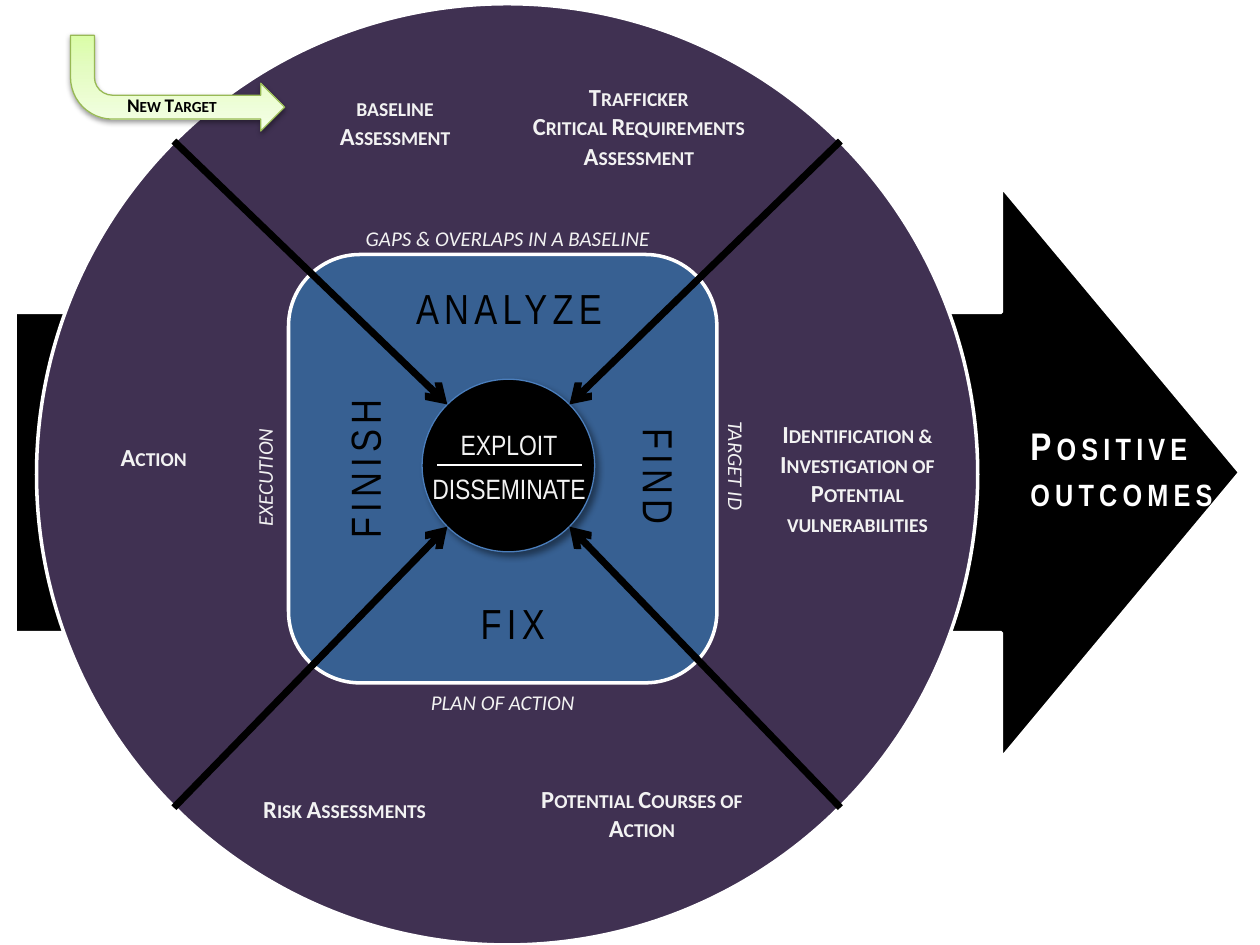
from copy import deepcopy
from dataclasses import dataclass

from lxml import etree
from pptx import Presentation
from pptx.dml.color import RGBColor
from pptx.enum.shapes import MSO_CONNECTOR, MSO_SHAPE
from pptx.enum.text import MSO_AUTO_SIZE, PP_ALIGN
from pptx.oxml.ns import qn
from pptx.util import Pt

PX = 9144  # EMU in one px, at 100 px to the inch

BLACK = RGBColor(0x00, 0x00, 0x00)
WHITE = RGBColor(0xFF, 0xFF, 0xFF)
PALE = RGBColor(0xF2, 0xF2, 0xF2)
PURPLE = RGBColor(0x40, 0x31, 0x52)
BLUE = RGBColor(0x37, 0x60, 0x92)
RIM_BLUE = RGBColor(0x4B, 0x7E, 0xBC)
RIM_GREEN = RGBColor(0x98, 0xB9, 0x55)
GREEN_STOPS = (
    (0, RGBColor(0xDA, 0xFD, 0xA7)),
    (0.35, RGBColor(0xE4, 0xFC, 0xC2)),
    (1, RGBColor(0xF5, 0xFF, 0xE7)),
)

RIGHT_ARROW = MSO_SHAPE.RIGHT_ARROW
BENT_ARROW = MSO_SHAPE.BENT_ARROW
OVAL = MSO_SHAPE.OVAL
ROUNDED = MSO_SHAPE.ROUNDED_RECTANGLE
STRAIGHT = MSO_CONNECTOR.STRAIGHT
CENTER, LEFT = PP_ALIGN.CENTER, PP_ALIGN.LEFT
GROW, FIXED = MSO_AUTO_SIZE.SHAPE_TO_FIT_TEXT, MSO_AUTO_SIZE.NONE

# Font properties, colour, and extra run attributes of each text style
STEP = ({"name": "Calibri", "size": Pt(14), "bold": True}, PALE, {"cap": "small"})
ENTRY = ({"name": "Calibri", "size": Pt(11), "bold": True}, BLACK, {"cap": "small"})
OUTPUT = ({"name": "Calibri", "size": Pt(12), "italic": True}, PALE, {})
PHASE = ({"name": "Arial Narrow", "size": Pt(24)}, BLACK, {"spc": "300"})
CORE = ({"name": "Arial Narrow", "size": Pt(16)}, PALE, {})
RESULT = ({"name": "Arial Narrow", "size": Pt(22), "bold": True}, WHITE,
          {"cap": "small", "spc": "300"})


@dataclass
class Figure:
    kind: int
    frame: tuple
    fill: RGBColor | None
    line: RGBColor
    weight: float
    adjustments: tuple = ()


@dataclass
class Label:
    text: str
    frame: tuple
    style: tuple
    align: int = CENTER
    rotation: int = 0
    fit: int = GROW
    wrap: bool = True
    space_after: int = 0
    hanging: int = 0


@dataclass
class Shadow:
    alpha: int
    blur: float
    distance: float
    angle: int


def emu(lengths: tuple) -> list:
    return [length * PX for length in lengths]


def draw_figure(page, figure: Figure):
    shape = page.shapes.add_shape(figure.kind, *emu(figure.frame))
    shape.shadow.inherit = False
    for index, value in enumerate(figure.adjustments):
        shape.adjustments[index] = value
    if figure.fill is not None:
        shape.fill.solid()
        shape.fill.fore_color.rgb = figure.fill
    shape.line.color.rgb = figure.line
    shape.line.width = Pt(figure.weight)
    return shape


def cast_shadow(shape, shadow: Shadow) -> None:
    effects = shape._element.spPr.find(qn("a:effectLst"))
    outer = etree.SubElement(
        effects, qn("a:outerShdw"), blurRad=str(Pt(shadow.blur)),
        dist=str(Pt(shadow.distance)), dir=str(shadow.angle * 60000), rotWithShape="0")
    color = etree.SubElement(outer, qn("a:srgbClr"), val=str(BLACK))
    etree.SubElement(color, qn("a:alpha"), val=str(shadow.alpha * 1000))


def fill_gradient(shape, stops: tuple) -> None:
    shape.fill.gradient()
    shape.fill.gradient_angle = 90
    stop_list = shape._element.spPr.find(".//" + qn("a:gsLst"))
    stop_list.append(deepcopy(stop_list[0]))
    for stop, (position, color) in zip(shape.fill.gradient_stops, stops):
        stop.position = position
        stop.color.rgb = color


def format_run(span, style: tuple) -> None:
    values, color, extras = style
    for name, value in values.items():
        setattr(span.font, name, value)
    span.font.color.rgb = color
    for name, value in extras.items():
        span._r.get_or_add_rPr().set(name, value)


def draw_label(page, label: Label) -> None:
    box = page.shapes.add_textbox(*emu(label.frame))
    box.rotation = label.rotation
    frame = box.text_frame
    frame.text = label.text
    frame.word_wrap = label.wrap
    frame.auto_size = label.fit
    for para in frame.paragraphs:
        para.alignment = label.align
        if label.hanging:
            properties = para._p.get_or_add_pPr()
            properties.set("marL", str(label.hanging * PX))
            properties.set("indent", str(-label.hanging * PX))
        for span in para.runs:
            format_run(span, label.style)
        # A line break takes the size of the text around it
        for line_break in para._p.findall(qn("a:br")):
            line_break.append(deepcopy(para.runs[0]._r.rPr))
    for para in frame.paragraphs[:-1]:
        para.space_after = Pt(label.space_after)


def draw_line(page, start: tuple, end: tuple, color: RGBColor, weight: float,
              arrow: bool = False) -> None:
    line = page.shapes.add_connector(STRAIGHT, *emu(start + end))
    line.line.color.rgb = color
    line.line.width = Pt(weight)
    if arrow:
        etree.SubElement(line.line._get_or_add_ln(), qn("a:tailEnd"), type="arrow")
    etree.SubElement(line._element.spPr, qn("a:effectLst"))


OUTCOME_ARROW = Figure(RIGHT_ARROW, (12, 148, 972, 454), BLACK, WHITE, 2, (0.56, 0.417))
WHEEL = Figure(OVAL, (29, 3, 747, 747), PURPLE, WHITE, 2)
ENTRY_ARROW = Figure(BENT_ARROW, (56, 28, 170, 76), None, RIM_GREEN, 0.75,
                     (0.25, 0.25, 0.25, 0.438))
PHASE_BLOCK = Figure(ROUNDED, (229, 202, 340, 340), BLUE, WHITE, 2)
HUB = Figure(OVAL, (335, 301, 137, 137), BLACK, RIM_BLUE, 0.75)

LABELS = (
    # Steps on the wheel
    Label("Trafficker\vCritical Requirements Assessment", (386, 60, 242, 47), STEP, fit=FIXED),
    Label("baseline\nAssessment", (214, 68, 199, 47), STEP, fit=FIXED),
    Label("Identification & Investigation of Potential vulnerabilities",
          (592, 328, 177, 47), STEP, fit=FIXED),
    Label("Potential Courses of Action", (413, 617, 193, 47), STEP, fit=FIXED),
    Label("Risk Assessments", (177, 625, 193, 47), STEP, fit=FIXED),
    Label("Action", (19, 346, 206, 47), STEP, fit=FIXED),
    # Way in and way out
    Label("New Target", (91, 69, 99, 29), ENTRY, LEFT, wrap=False),
    Label("Positive outcomes", (808, 330, 188, 77), RESULT, LEFT),
    # Outputs around the block
    Label("GAPS & OVERLAPS IN A BASELINE", (214, 174, 378, 30), OUTPUT),
    Label("TARGET ID", (536, 358, 97, 30), OUTPUT, LEFT, 90, wrap=False),
    Label("PLAN OF ACTION", (299, 542, 200, 30), OUTPUT),
    Label("EXECUTION", (156, 359, 108, 30), OUTPUT, LEFT, 270, wrap=False),
    # Phases in the block
    Label("ANALYZE", (289, 219, 230, 50), PHASE, hanging=25),
    Label("FIND", (465, 353, 117, 50), PHASE, rotation=90),
    Label("FIX", (370, 469, 74, 50), PHASE),
    Label("FINISH", (220, 347, 138, 50), PHASE, rotation=270),
    # Hub
    Label("EXPLOIT\nDISSEMINATE", (318, 334, 172, 72), CORE, space_after=6),
)


def main() -> None:
    deck = Presentation()
    deck.slide_width, deck.slide_height = emu((1000, 750))
    page = deck.slides.add_slide(deck.slide_layouts[6])

    # Arrow, wheel, block and hub
    draw_figure(page, OUTCOME_ARROW)
    draw_figure(page, WHEEL)
    entry = draw_figure(page, ENTRY_ARROW)
    entry.rotation = 180
    entry._element.spPr.xfrm.set("flipH", "1")
    fill_gradient(entry, GREEN_STOPS)
    cast_shadow(entry, Shadow(38, 3.1, 1.6, 90))
    draw_figure(page, PHASE_BLOCK)
    cast_shadow(draw_figure(page, HUB), Shadow(43, 4, 3, 45))

    # Spokes from the rim to the hub, and the rule inside the hub
    for rim_x, hub_x in ((138, 355), (667, 452)):
        for rim_y, hub_y in ((112, 321), (641, 418)):
            draw_line(page, (rim_x, rim_y), (hub_x, hub_y), BLACK, 4, arrow=True)
    draw_line(page, (347, 369), (462, 369), WHITE, 0.75)

    for label in LABELS:
        draw_label(page, label)
    deck.save("out.pptx")


if __name__ == "__main__":
    main()
